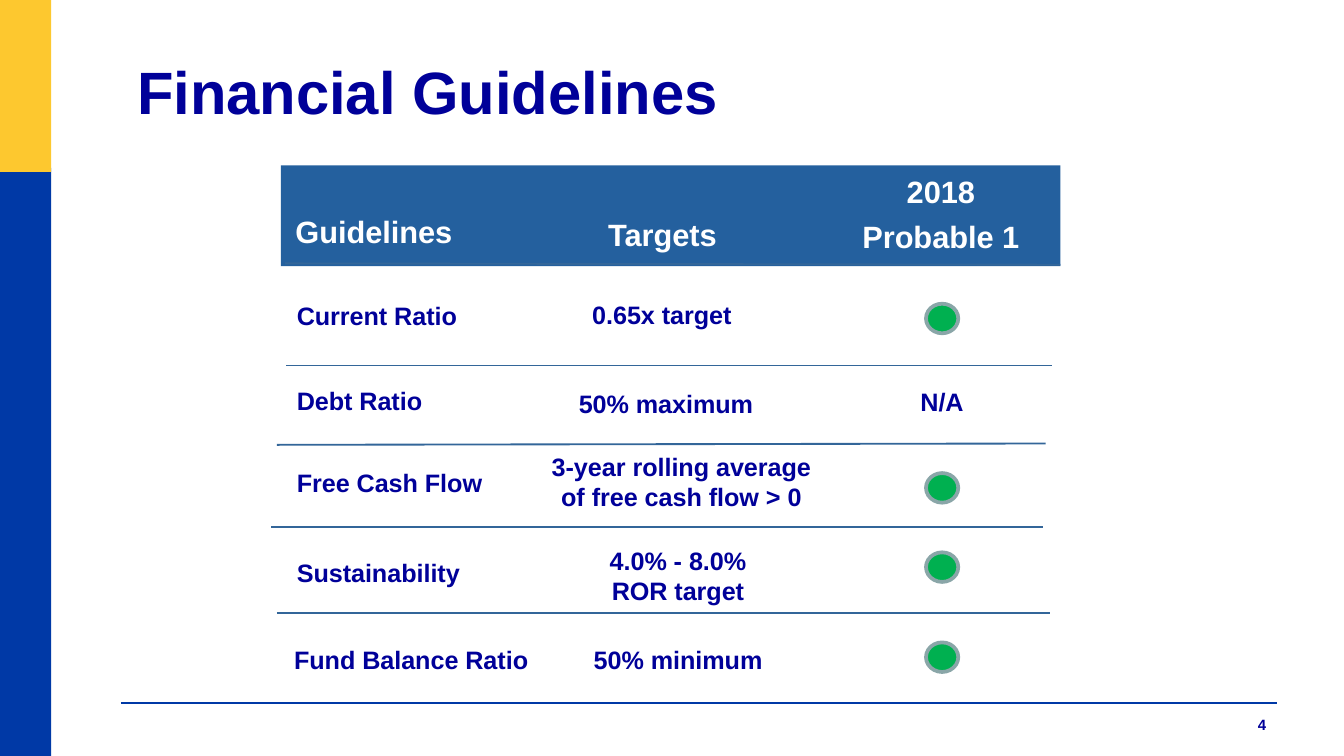
"""Build the Financial Guidelines slide with its targets and status marks."""

import dataclasses

import lxml.etree
import pptx
import pptx.dml.color
import pptx.enum.shapes
import pptx.enum.text
import pptx.oxml.ns
import pptx.presentation
import pptx.shapes.autoshape
import pptx.slide
import pptx.text.text
import pptx.util

Inches = pptx.util.Inches
Pt = pptx.util.Pt
Shape = pptx.enum.shapes.MSO_SHAPE
Align = pptx.enum.text.PP_ALIGN

FONT = "Arial"
COLORS = {
    "navy": "000099",
    "blue": "0039A6",
    "gold": "FDC82F",
    "header": "24609E",
    "rule": "336699",
    "green": "00B050",
    "ring": "8AA6A8",
    "white": "FFFFFF",
}


@dataclasses.dataclass
class Label:
    text: str
    left: float
    middle: float
    width: float
    align: Align = Align.CENTER
    height: float = 0.5
    size: float = 13.5
    color: str = "navy"
    gap: float = 0


@dataclasses.dataclass
class Rule:
    start: tuple[float, float]
    end: tuple[float, float]
    color: str = "rule"
    weight: float = 1


HEADERS = [
    Label("Guidelines", 2.1, 1.72, 1.56, Align.LEFT, size=16.5, color="white"),
    Label("Targets", 4.15, 1.74, 1.56, size=16.5, color="white"),
    Label("2018\nProbable 1", 6.24, 1.59, 1.52, height=0.74, size=16.5, color="white", gap=4),
]
GUIDELINES = [
    Label("Current Ratio", 2.11, 2.35, 1.89, Align.LEFT),
    Label("Debt Ratio", 2.11, 2.98, 1.89, Align.LEFT),
    Label("Free Cash Flow", 2.11, 3.59, 1.89, Align.LEFT),
    Label("Sustainability", 2.11, 4.26, 1.89, Align.LEFT),
    Label("Fund Balance Ratio", 2.09, 4.91, 2.2, Align.LEFT),
]
TARGETS = [
    Label("0.65x target", 3.88, 2.34, 2.09),
    Label("50% maximum", 3.91, 3, 2.09),
    Label("3-year rolling average of free cash flow > 0", 3.91, 3.58, 2.32, height=0.6),
    Label("4.0% - 8.0%\nROR target", 3.91, 4.28, 2.27, height=0.6),
    Label("50% minimum", 4, 4.91, 2.09),
]
NOT_APPLICABLE = Label("N/A", 6.75, 2.99, 0.75, Align.LEFT)
RULES = [
    Rule((2.12, 1.96), (7.89, 1.97)),
    Rule((2.13, 2.72), (7.83, 2.72)),
    Rule((2.06, 3.31), (7.78, 3.3)),
    Rule((2.02, 3.92), (7.76, 3.92)),
    Rule((2.06, 4.56), (7.81, 4.56)),
]
STATUS_TOPS = [2.26, 3.52, 4.11, 4.78]


def rgb(name: str) -> pptx.dml.color.RGBColor:
    """Return the named colour."""
    return pptx.dml.color.RGBColor.from_string(COLORS[name])


def format_paragraph(
    paragraph: pptx.text.text._Paragraph, size: float, color: str, align: Align
) -> None:
    """Set the bold face, size, colour and alignment of a paragraph."""
    paragraph.alignment = align
    paragraph.font.name = FONT
    paragraph.font.size = Pt(size)
    paragraph.font.bold = True
    paragraph.font.color.rgb = rgb(color)


def add_label(slide: pptx.slide.Slide, label: Label) -> None:
    """Add a text box centred on the height of its label."""
    box = slide.shapes.add_textbox(
        Inches(label.left),
        Inches(label.middle - label.height / 2),
        Inches(label.width),
        Inches(label.height),
    )
    frame = box.text_frame
    frame.word_wrap = True
    frame.vertical_anchor = pptx.enum.text.MSO_ANCHOR.MIDDLE
    frame.text = label.text
    for paragraph in frame.paragraphs:
        format_paragraph(paragraph, label.size, label.color, label.align)
    for paragraph in frame.paragraphs[1:]:
        paragraph.space_before = Pt(label.gap)


def add_filled_shape(
    slide: pptx.slide.Slide,
    kind: Shape,
    left: float,
    top: float,
    width: float,
    height: float,
    color: str,
) -> pptx.shapes.autoshape.Shape:
    """Add a flat shape with no outline."""
    shape = slide.shapes.add_shape(
        kind, Inches(left), Inches(top), Inches(width), Inches(height)
    )
    shape.shadow.inherit = False
    shape.fill.solid()
    shape.fill.fore_color.rgb = rgb(color)
    shape.line.fill.background()
    return shape


def add_rule(slide: pptx.slide.Slide, rule: Rule) -> None:
    """Add a straight line without a shadow."""
    connector = slide.shapes.add_connector(
        pptx.enum.shapes.MSO_CONNECTOR.STRAIGHT,
        *(Inches(value) for value in (*rule.start, *rule.end)),
    )
    connector.line.color.rgb = rgb(rule.color)
    connector.line.width = Pt(rule.weight)
    properties = connector._element.spPr
    lxml.etree.SubElement(properties, pptx.oxml.ns.qn("a:effectLst"))


def add_status(slide: pptx.slide.Slide, top: float) -> None:
    """Add a green status mark with a grey ring."""
    mark = add_filled_shape(
        slide, Shape.FLOWCHART_CONNECTOR, 6.89, top, 0.24, 0.22, "green"
    )
    mark.line.color.rgb = rgb("ring")
    mark.line.width = Pt(2)


def add_title(slide: pptx.slide.Slide, text: str) -> None:
    """Place and format the slide title."""
    title = slide.shapes.title
    title.left, title.top = Inches(0.95), Inches(0.19)
    title.width, title.height = Inches(6.75), Inches(1.04)
    frame = title.text_frame
    frame.text = text
    frame.vertical_anchor = pptx.enum.text.MSO_ANCHOR.MIDDLE
    frame.margin_left = frame.margin_right = Inches(0.07)
    frame.margin_top = frame.margin_bottom = Inches(0.04)
    frame.paragraphs[0].line_spacing = 0.9
    format_paragraph(frame.paragraphs[0], 32, "navy", Align.LEFT)


def main() -> None:
    """Build and save the presentation."""
    presentation = pptx.Presentation()
    presentation.slide_width = Inches(10)
    presentation.slide_height = Inches(10 * 9 / 16)
    slide = presentation.slides.add_slide(presentation.slide_layouts[5])

    add_rule(slide, Rule((0.9, 5.23), (9.5, 5.23), "blue", 0.75))
    add_filled_shape(slide, Shape.RECTANGLE, 0, 1.25, 0.38, 4.4, "blue")
    add_filled_shape(slide, Shape.RECTANGLE, 0, 0, 0.38, 1.28, "gold")
    add_filled_shape(slide, Shape.RECTANGLE, 2.09, 1.23, 5.8, 0.75, "header")
    add_title(slide, "Financial Guidelines")
    for rule in RULES:
        add_rule(slide, rule)
    for label in [*HEADERS, *GUIDELINES, *TARGETS, NOT_APPLICABLE]:
        add_label(slide, label)
    for top in STATUS_TOPS:
        add_status(slide, top)
    add_label(slide, Label("4", 9.01, 5.39, 0.51, Align.RIGHT, height=0.15, size=8))
    presentation.save("out.pptx")


if __name__ == "__main__":
    main()
